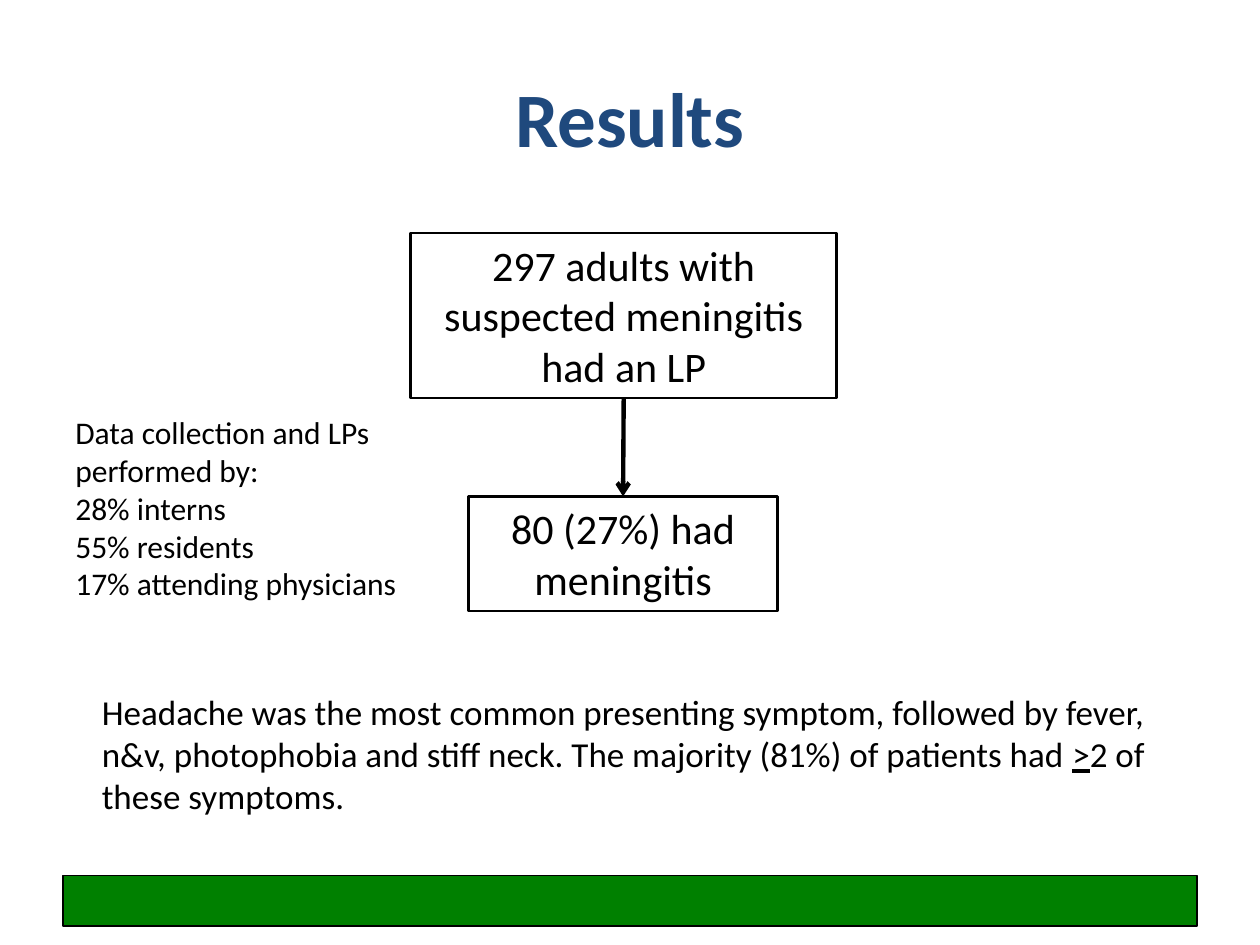
from lxml import etree
from pptx import Presentation
from pptx.dml.color import RGBColor
from pptx.enum.shapes import MSO_CONNECTOR, MSO_SHAPE
from pptx.enum.text import MSO_ANCHOR, PP_ALIGN
from pptx.oxml.ns import qn
from pptx.util import Pt

RECTANGLE = MSO_SHAPE.RECTANGLE
STRAIGHT = MSO_CONNECTOR.STRAIGHT
TOP, MIDDLE = MSO_ANCHOR.TOP, MSO_ANCHOR.MIDDLE
LEFT, CENTER = PP_ALIGN.LEFT, PP_ALIGN.CENTER
PX = 9144
BLACK = "000000"


def color(value):
    return RGBColor.from_string(value)


def write(shape, lines, size, align, anchor=TOP, ink=BLACK, bold=False):
    frame = shape.text_frame
    frame.word_wrap = True
    frame.vertical_anchor = anchor
    frame.text = "\n".join(lines)
    for para in frame.paragraphs:
        para.alignment = align
        para.font.name = "Calibri"
        para.font.size = Pt(size)
        para.font.bold = bold
        para.font.color.rgb = color(ink)


deck = Presentation()
deck.slide_width, deck.slide_height = 1000 * PX, 750 * PX
page = deck.slides.add_slide(deck.slide_layouts[5])

title = page.shapes.title
title.left, title.top, title.width, title.height = 50 * PX, 30 * PX, 900 * PX, 125 * PX
write(title, ["Results"], 44, CENTER, MIDDLE, "1F497D", True)

footer_bar = page.shapes.add_shape(RECTANGLE, 50 * PX, 695 * PX, 900 * PX, 40 * PX)
footer_bar.shadow.inherit = False
footer_bar.fill.solid()
footer_bar.fill.fore_color.rgb = color("008000")
footer_bar.line.color.rgb = color(BLACK)
footer_bar.line.width = Pt(0.75)

steps = []
for left, top, width, height, label in [
    (326, 185, 338, 131, "297 adults with suspected meningitis had an LP"),
    (372, 394, 245, 91, "80 (27%) had meningitis"),
]:
    box = page.shapes.add_shape(RECTANGLE, left * PX, top * PX, width * PX, height * PX)
    box.shadow.inherit = False
    box.fill.background()
    box.line.color.rgb = color(BLACK)
    box.line.width = Pt(1.5)
    write(box, [label], 24, CENTER)
    steps.append(box)

arrow = page.shapes.add_connector(STRAIGHT, 0, 0, 0, 0)
arrow.begin_connect(steps[0], 2)
arrow.end_connect(steps[1], 0)
arrow.line.color.rgb = color(BLACK)
arrow.line.width = Pt(2.5)
etree.SubElement(arrow.line._get_or_add_ln(), qn("a:tailEnd"), type="arrow")
etree.SubElement(arrow._element.spPr, qn("a:effectLst"))

performers = page.shapes.add_textbox(50 * PX, 323 * PX, 276 * PX, 162 * PX)
write(performers, [
    "Data collection and LPs performed by:",
    "28% interns",
    "55% residents",
    "17% attending physicians",
], 18, LEFT)

symptoms = page.shapes.add_textbox(71 * PX, 543 * PX, 900 * PX, 111 * PX)
write(symptoms, [
    "Headache was the most common presenting symptom, followed by fever, n&v, "
    "photophobia and stiff neck. The majority (81%) of patients had "
], 20, LEFT)
para = symptoms.text_frame.paragraphs[0]
span = para.add_run()
span.text = ">"
span.font.underline = True
para.add_run().text = "2 of these symptoms."

deck.save("out.pptx")
